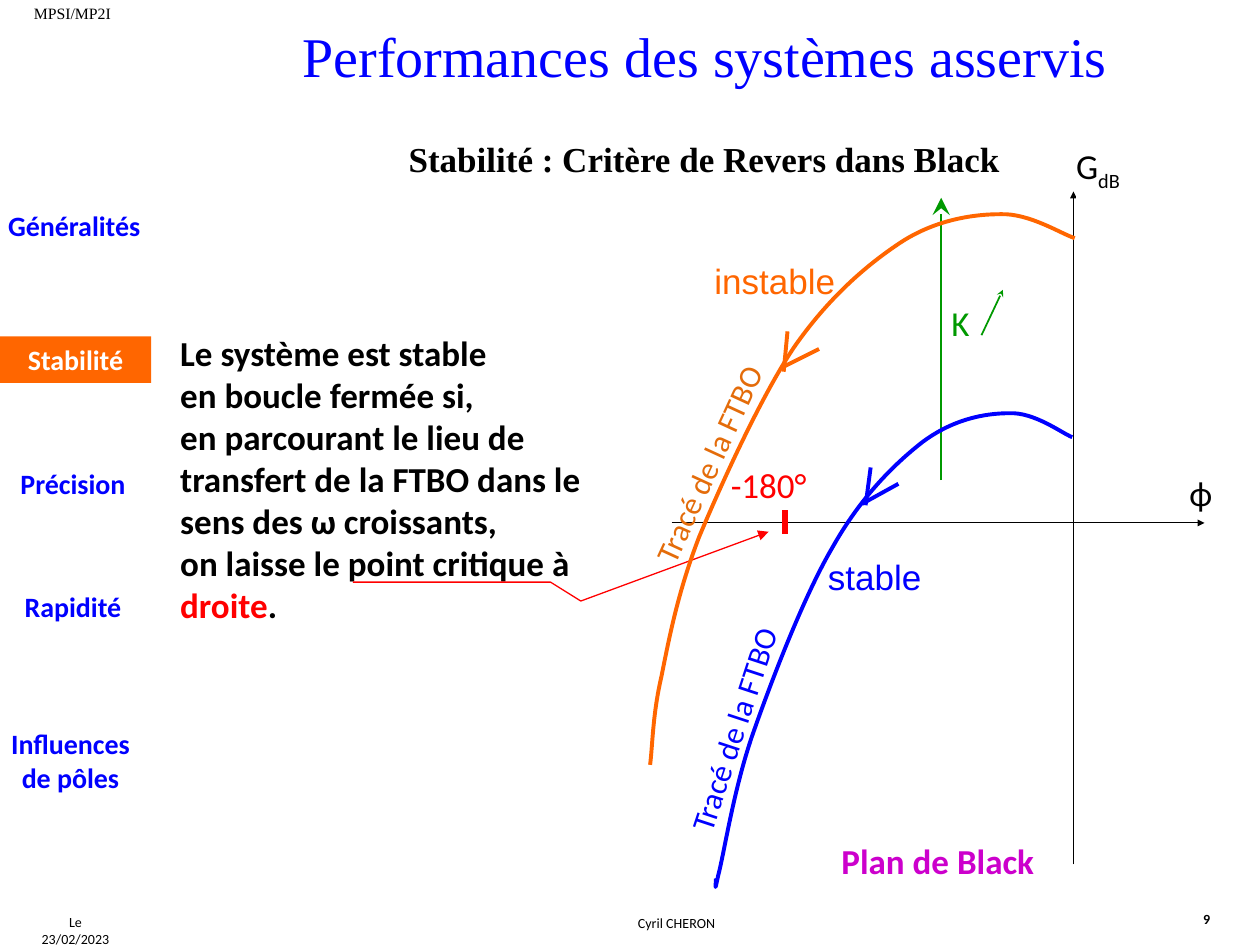
from dataclasses import dataclass
from typing import Any

from lxml.etree import SubElement
from pptx import Presentation
from pptx.dml.color import RGBColor
from pptx.enum.shapes import MSO_CONNECTOR, MSO_SHAPE
from pptx.enum.text import MSO_ANCHOR, MSO_AUTO_SIZE, PP_ALIGN
from pptx.oxml.ns import qn
from pptx.util import Emu, Pt

PX = 9144  # 100 px to the inch
BLUE, ORANGE, GREEN, RED = "0000FF", "FF6600", "009900", "FF0000"
BLACK, WHITE = "000000", "FFFFFF"
SERIF = "Times New Roman"
LEFT, MID = PP_ALIGN.LEFT, PP_ALIGN.CENTER
TIGHT, NORMAL, SMALL = (0, 0), (10, 5), (4, 5)


def rgb(code):
    return RGBColor.from_string(code)


def style(font, size, color, face="Calibri", bold=False):
    font.size, font.name, font.bold = Pt(size), face, bold
    font.color.rgb = rgb(color)


def stroke(shape, color, width, tip=None, head="med"):
    shape.line.color.rgb = rgb(color)
    shape.line.width = Pt(width)
    if tip:
        SubElement(shape.line._get_or_add_ln(), qn("a:tailEnd"),
                   type=tip, w=head, len=head)


def bend(shape):
    """Turn each three straight segments into one cubic curve."""
    track = next(shape._element.iter(qn("a:path")))
    legs = track.findall(qn("a:lnTo"))
    for i in range(0, len(legs), 3):
        curve = SubElement(track, qn("a:cubicBezTo"))
        for leg in legs[i:i + 3]:
            curve.append(leg[0])
            track.remove(leg)


@dataclass
class Pen:
    """Draws on a slide, relative to a region's top left corner."""
    shapes: Any
    left: int
    top: int

    def spot(self, x, y):
        return Emu((self.left + x) * PX), Emu((self.top + y) * PX)

    def text(self, words, box, size, color, face="Calibri", bold=False,
             align=LEFT, pad=NORMAL, wrap=True, turn=0, fill=None):
        x, y, w, h = box
        area = (*self.spot(x, y), w * PX, h * PX)
        if fill:
            shape = self.shapes.add_shape(MSO_SHAPE.RECTANGLE, *area)
            shape.fill.solid()
            shape.fill.fore_color.rgb = rgb(fill)
            shape.line.fill.background()
            shape.shadow.inherit = False
        else:
            shape = self.shapes.add_textbox(*area)
        shape.rotation = turn
        frame = shape.text_frame
        frame.vertical_anchor = MSO_ANCHOR.TOP
        frame.word_wrap = wrap
        if not wrap:
            frame.auto_size = MSO_AUTO_SIZE.SHAPE_TO_FIT_TEXT
        frame.margin_left = frame.margin_right = pad[0] * PX
        frame.margin_top = frame.margin_bottom = pad[1] * PX
        frame.text = words
        para = frame.paragraphs[0]
        para.alignment = align
        style(para.runs[0].font, size, color, face, bold)
        return para

    def line(self, start, end, color, width, tip=None, head="med"):
        link = self.shapes.add_connector(
            MSO_CONNECTOR.STRAIGHT, *self.spot(*start), *self.spot(*end))
        stroke(link, color, width, tip, head)
        SubElement(link._element.spPr, qn("a:effectLst"))

    def trail(self, points, color, width, tip=None):
        spots = [self.spot(*p) for p in points]
        form = self.shapes.build_freeform(*spots[0], scale=1.0)
        form.add_line_segments(spots[1:], close=False)
        shape = form.convert_to_shape()
        shape.fill.background()
        shape.shadow.inherit = False
        stroke(shape, color, width, tip)
        return shape


def place(shape, x, y, w, h):
    shape.left, shape.top, shape.width, shape.height = (
        n * PX for n in (x, y, w, h))
    shape.text_frame.auto_size = MSO_AUTO_SIZE.NONE


def heading(slide, x, y, w, h):
    title = slide.shapes.title
    place(title, x, y, w, h)
    title.text_frame.text = "Performances des systèmes asservis"
    title.text_frame.vertical_anchor = MSO_ANCHOR.TOP
    para = title.text_frame.paragraphs[0]
    para.alignment = MID
    style(para.runs[0].font, 32, BLUE, SERIF)


def rule(slide, x, y, w, h):
    body = slide.placeholders[1]
    place(body, x, y, w, h)
    frame = body.text_frame
    frame.text = ("Le système est stable\n"
                  "en boucle fermée si,\n"
                  "en parcourant le lieu de transfert de la FTBO "
                  "dans le sens des ω croissants,\n"
                  "on laisse le point critique à ")
    for word in ("droite", "."):
        frame.paragraphs[-1].add_run().text = word
    for para in frame.paragraphs:
        props = para._p.get_or_add_pPr()
        props.set("marL", "0")
        props.set("indent", "0")
        SubElement(props, qn("a:buNone"))
        para.space_before = Pt(0)
        para.alignment = LEFT
        for run in para.runs:
            color = RED if run.text == "droite" else BLACK
            style(run.font, 20, color, bold=True)


def margins(slide, x, y):
    """Header and footer lines."""
    pen = Pen(slide.shapes, x, y)
    pen.text("MPSI/MP2I", (17, -2, 86, 25), 9, BLACK, SERIF)
    pen.text("Le 23/02/2023", (17, 720, 86, 24), 8, BLACK, align=MID, wrap=False)
    pen.text("Cyril CHERON", (125, 721, 824, 24), 8, BLACK, align=MID)
    pen.text("9", (945, 718, 39, 24), 8, BLACK, bold=True, wrap=False)


def menu(slide, x, y, w):
    pen = Pen(slide.shapes, x, y)
    items = (("Généralités", 1, 0, 37), ("Précision", 0, 204, 37),
             ("Rapidité", 0, 302, 37), ("Influences de pôles", -2, 411, 64))
    for name, dx, dy, h in items:
        pen.text(name, (dx, dy, w, h), 16, BLUE, bold=True, align=MID, pad=SMALL)
    pen.text("Stabilité", (0, 106, w + 4, 37), 16, WHITE, bold=True,
             align=MID, pad=SMALL, fill=ORANGE)


def axes(slide, x, y):
    pen = Pen(slide.shapes, x, y)
    pen.line((33, 315), (456, 315), BLACK, 0.5, "triangle", "sm")
    pen.line((352, 586), (352, 52), BLACK, 0.5, "triangle", "sm")
    pen.text("ϕ", (444, 274, 36, 56), 20, BLACK, pad=TIGHT)
    gain = pen.text("G", (354, 15, 69, 56), 20, BLACK, pad=TIGHT, fill=WHITE)
    sub = gain.add_run()
    sub.text = "dB"
    style(sub.font, 20, BLACK)
    sub._r.get_or_add_rPr().set("baseline", "-25000")
    pen.text("Plan de Black", (158, 561, 184, 43), 20, "CC00CC", bold=True)


def growth(slide, x, y):
    """Arrow of the rising gain K."""
    pen = Pen(slide.shapes, x, y)
    pen.line((0, 224), (0, 0), GREEN, 1.5, "stealth", "lg")
    pen.text("K", (8, 82, 38, 56), 20, GREEN, pad=TIGHT)
    pen.line((32, 109), (49, 73), GREEN, 1, "stealth", "sm")


def critical(slide, x, y):
    """Critical point, with the pointer that leads to it."""
    pen = Pen(slide.shapes, x, y)
    pen.line((343, 37), (343, 56), RED, 3)
    pen.text("-180°", (300, 0, 93, 52), 20, RED, pad=TIGHT)
    pen.trail([(0, 94), (157, 94), (181, 109), (330, 54)], RED, 0.75, "triangle")


def trace(slide, x, y, color, points, barbs, name, spot, label, turn, tint):
    pen = Pen(slide.shapes, x, y)
    bend(pen.trail(points, color, 2.25))
    for start, end in barbs:
        pen.line(start, end, color, 2.25)
    pen.text("Tracé de la FTBO", (*label, 223, 40), 18, tint, turn=turn)
    pen.text(name, (*spot, 161, 43), 20, color, "Arial", pad=TIGHT)


def main():
    deck = Presentation()
    deck.slide_width, deck.slide_height = 1000 * PX, 750 * PX
    slide = deck.slides.add_slide(deck.slide_layouts[1])
    heading(slide, 217, 12, 685, 64)
    rule(slide, 133, 258, 343, 243)
    margins(slide, 0, 0)
    menu(slide, 0, 161, 116)
    axes(slide, 500, 100)
    growth(slide, 747, 157)
    Pen(slide.shapes, 130, 104).text(
        "Stabilité : Critère de Revers dans Black", (0, 0, 858, 44), 20, BLACK,
        SERIF, True, MID)
    critical(slide, 280, 368)
    trace(slide, 500, 300, BLUE,
          [(351, 47), (343, 44), (321, 27), (301, 28), (281, 28), (256, 33),
           (232, 51), (209, 69), (183, 95), (161, 134), (138, 173), (112, 241),
           (97, 284), (82, 328), (75, 376), (70, 395), (66, 414), (69, 397),
           (68, 397)],
          [((187, 101), (191, 71)), ((213, 84), (184, 100))],
          "stable", (157, 141), (-24, 242), 288.2, BLUE)
    trace(slide, 500, 100, ORANGE,
          [(353, 89), (343, 86), (317, 69), (294, 70), (271, 70), (241, 75),
           (214, 93), (187, 111), (157, 137), (130, 176), (104, 215), (73, 283),
           (55, 326), (38, 370), (31, 407), (25, 437), (18, 467), (18, 492),
           (16, 507)],
          [((122, 195), (125, 163)), ((150, 177), (120, 192))],
          "instable", (67, 106), (-42, 232), 294.7, "E46C0A")
    deck.save("out.pptx")


if __name__ == "__main__":
    main()
